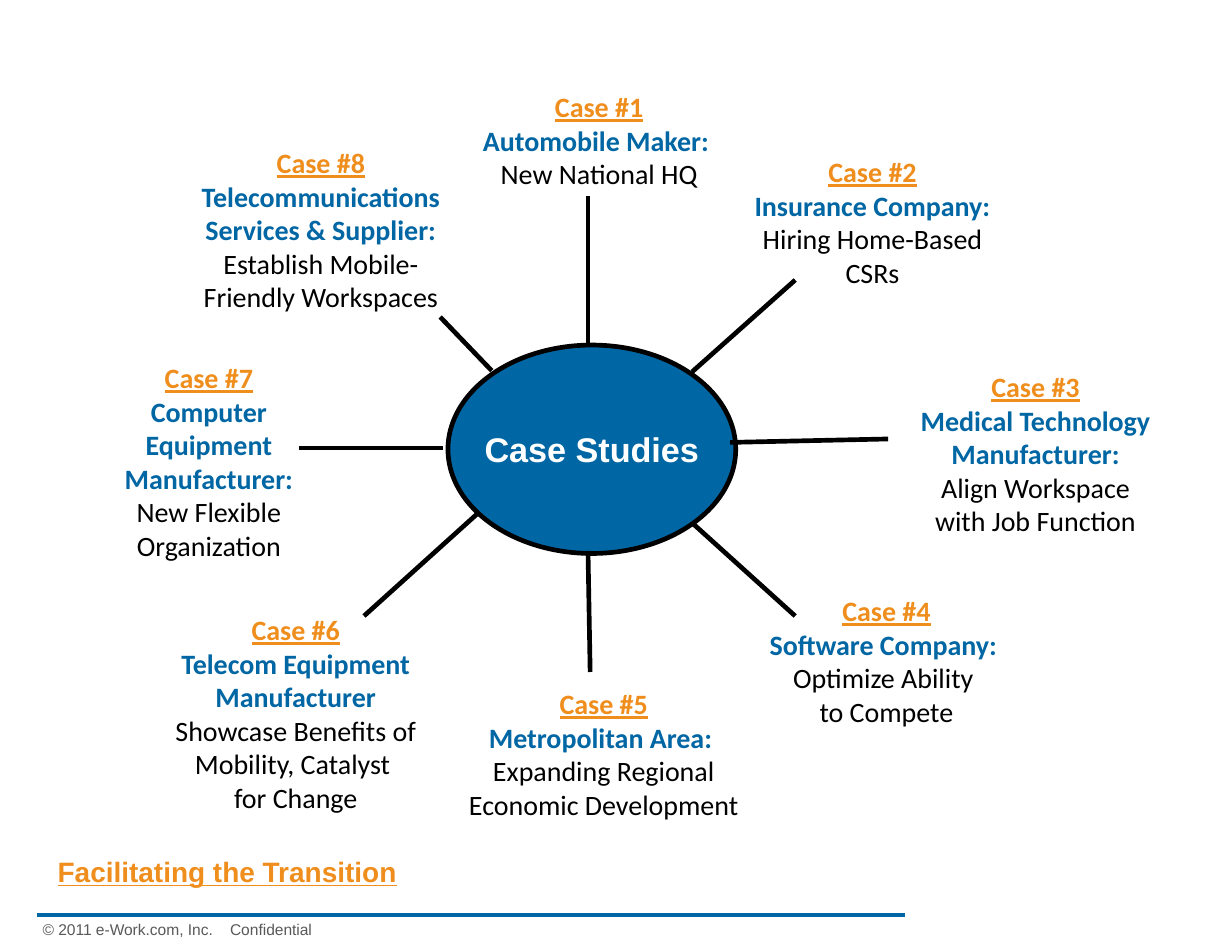
from lxml import etree
from pptx import Presentation
from pptx.dml.color import RGBColor
from pptx.enum.shapes import MSO_CONNECTOR, MSO_SHAPE
from pptx.enum.text import MSO_ANCHOR, PP_ALIGN
from pptx.oxml.ns import qn
from pptx.util import Pt

STRAIGHT = MSO_CONNECTOR.STRAIGHT
OVAL = MSO_SHAPE.OVAL
MIDDLE = MSO_ANCHOR.MIDDLE
LEFT, CENTER = PP_ALIGN.LEFT, PP_ALIGN.CENTER
BLUE, ORANGE, BLACK, WHITE, GRAY = "0066A4", "EF8E1C", "000000", "FFFFFF", "595959"

HUB_BOX = (288, 221.8, 185, 134)
CASES = [
    ((295.2, 54, 180, 72.7), "Case #1", "Automobile Maker: ", "New National HQ"),
    ((473.8, 95.8, 174.2, 94.3), "Case #2", "Insurance Company:", "Hiring Home-Based CSRs"),
    ((581.8, 234, 167.8, 116.6), "Case #3", "Medical Technology Manufacturer:",
     "Align Workspace with Job Function"),
    ((486, 378, 167.8, 94.3), "Case #4", "Software Company: ", "Optimize Ability \nto Compete"),
    ((293.8, 437.8, 188.6, 94.3), "Case #5", "Metropolitan Area: ",
     "Expanding Regional Economic Development"),
    ((95.8, 390.2, 188.6, 138.2), "Case #6", "Telecom Equipment Manufacturer",
     "Showcase Benefits of Mobility, Catalyst \nfor Change"),
    ((67, 228.2, 134.6, 138.2), "Case #7", "Computer Equipment Manufacturer:",
     "New Flexible Organization"),
    ((115.2, 90, 182.2, 116.6), "Case #8", "Telecommunications Services & Supplier:",
     "Establish Mobile-Friendly Workspaces"),
]
SPOKES = [
    (90, 0, 90, -95.8),
    (157, 17.2, 223.2, -41.8),
    (181.4, 62.6, 283, 60.4),
    (157, 114.4, 223.2, 174.2),
    (90, 132.4, 91.4, 210.2),
    (19.4, 108, -54, 174.2),
    (-2.9, 66.2, -95.8, 66.2),
    (28.1, 16.5, -5, -18),
]


def color(value):
    """Turn a hex string into a colour."""
    return RGBColor.from_string(value)


def add_run(paragraph, text, size, font, fill, bold=False, underline=False):
    """Add styled text, with a line break at each newline."""
    for index, part in enumerate(text.split("\n")):
        if index:
            paragraph.add_line_break()
        run = paragraph.add_run()
        run.text = part
        run.font.size = Pt(size)
        run.font.name = font
        run.font.color.rgb = color(fill)
        run.font.bold = bold
        run.font.underline = underline


def add_text_box(slide, box, align=LEFT, wrap=True):
    """Add an empty text box and return its text frame."""
    frame = slide.shapes.add_textbox(*map(Pt, box)).text_frame
    frame.word_wrap = wrap
    frame.paragraphs[0].alignment = align
    return frame


def add_line(slide, points, fill, width):
    """Add a straight line without a shadow."""
    line = slide.shapes.add_connector(STRAIGHT, *map(Pt, points))
    line.line.color.rgb = color(fill)
    line.line.width = Pt(width)
    etree.SubElement(line._element.spPr, qn("a:effectLst"))


def add_hub(slide, box):
    """Draw the central oval and the spokes around it."""
    left, top, _, _ = box
    hub = slide.shapes.add_shape(OVAL, *map(Pt, box))
    hub.shadow.inherit = False
    hub.fill.solid()
    hub.fill.fore_color.rgb = color(BLUE)
    hub.line.color.rgb = color(BLACK)
    hub.line.width = Pt(3)
    frame = hub.text_frame
    frame.word_wrap = False
    frame.vertical_anchor = MIDDLE
    paragraph = frame.paragraphs[0]
    paragraph.alignment = CENTER
    add_run(paragraph, "Case Studies", 22, "Arial", WHITE, bold=True)
    for x1, y1, x2, y2 in SPOKES:
        add_line(slide, (left + x1, top + y1, left + x2, top + y2), BLACK, 3)


def add_case(slide, box, label, client, result):
    """Write one case: its number, client and result."""
    frame = add_text_box(slide, box, CENTER)
    add_run(frame.paragraphs[0], label, 18, "Calibri", ORANGE, True, True)
    for text, fill, bold in ((client, BLUE, True), (result, BLACK, False)):
        paragraph = frame.add_paragraph()
        paragraph.alignment = CENTER
        add_run(paragraph, text, 18, "Calibri", fill, bold)


def add_footer(slide, box):
    """Draw the section title, the rule and the copyright line."""
    left, top, width, height = box
    title = add_text_box(slide, (left + 6.2, top, 234.7, 28.8), wrap=False)
    add_run(title.paragraphs[0], "Facilitating the Transition", 18, "Arial", ORANGE, True, True)
    rule = top + height - 19.4
    add_line(slide, (left, rule, left + width, rule), BLUE, 2)
    frame = add_text_box(slide, (left, rule, 210.2, 19.4))
    frame.margin_left = frame.margin_right = Pt(3.6)
    frame.margin_top = frame.margin_bottom = Pt(3.6)
    paragraph = frame.paragraphs[0]
    tabs = etree.SubElement(paragraph._p.get_or_add_pPr(), qn("a:tabLst"))
    etree.SubElement(tabs, qn("a:tab"), pos=str(Pt(120.5)), algn="l")
    add_run(paragraph, "© 2011 e-Work.com, Inc.\tConfidential", 10, "Arial", GRAY)


def main():
    """Build the case studies slide."""
    presentation = Presentation()
    presentation.slide_width, presentation.slide_height = Pt(792), Pt(612)
    slide = presentation.slides.add_slide(presentation.slide_layouts[6])
    add_footer(slide, (23.8, 545.8, 558, 61.8))
    add_hub(slide, HUB_BOX)
    for case in CASES:
        add_case(slide, *case)
    presentation.save("out.pptx")


if __name__ == "__main__":
    main()
